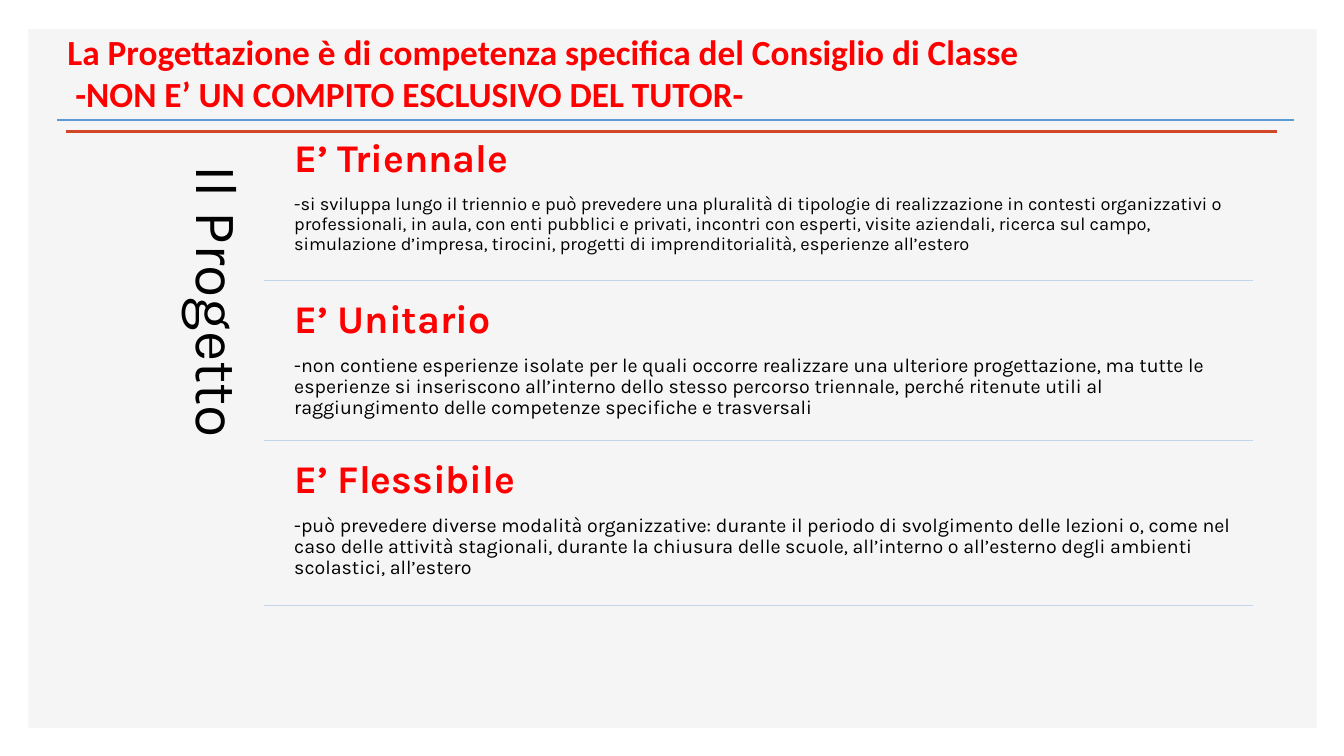
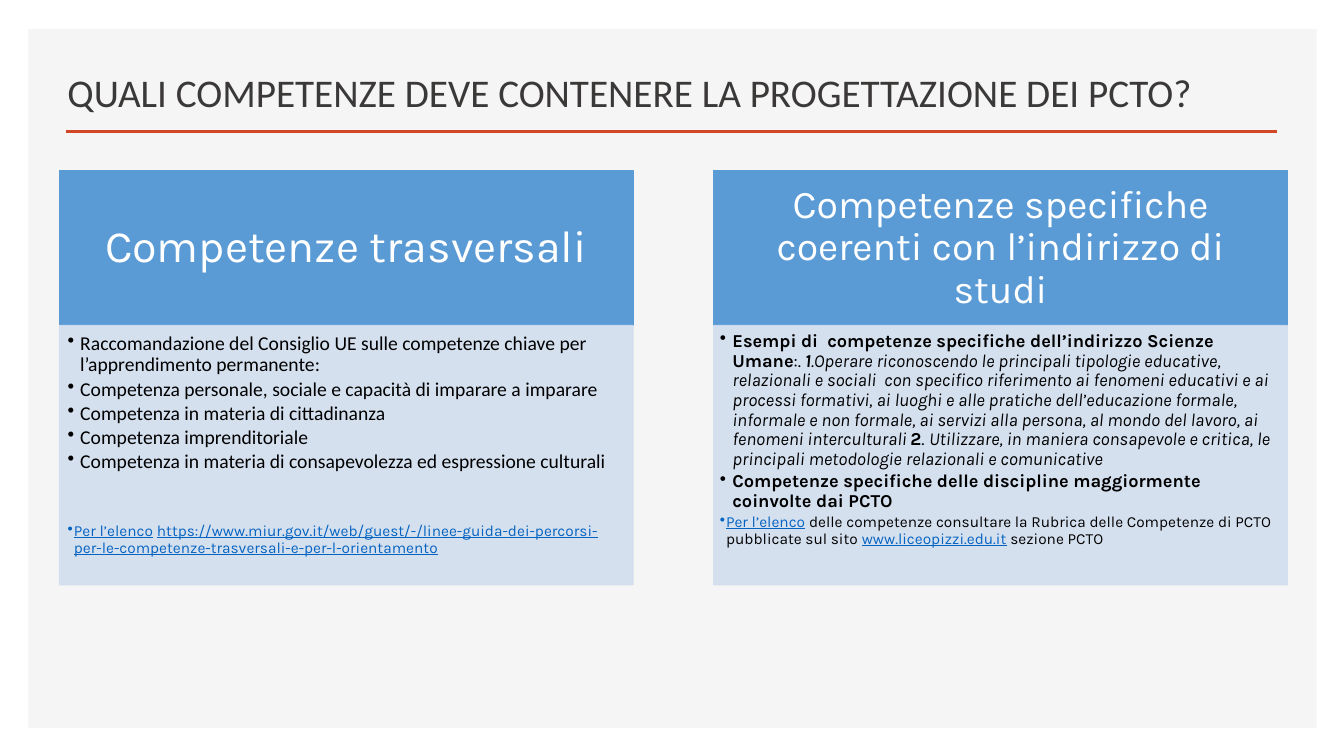
from lxml import etree
from pptx import Presentation
from pptx.dml.color import RGBColor
from pptx.enum.shapes import MSO_CONNECTOR, MSO_SHAPE
from pptx.enum.text import MSO_ANCHOR, MSO_AUTO_SIZE, PP_ALIGN
from pptx.oxml.ns import qn
from pptx.util import Pt

RECTANGLE, STRAIGHT = MSO_SHAPE.RECTANGLE, MSO_CONNECTOR.STRAIGHT
TOP, MIDDLE, BOTTOM = MSO_ANCHOR.TOP, MSO_ANCHOR.MIDDLE, MSO_ANCHOR.BOTTOM
LEFT, CENTER = PP_ALIGN.LEFT, PP_ALIGN.CENTER
NO_FIT = MSO_AUTO_SIZE.NONE

# Shared style
TITLE_FONT, TEXT_FONT = "Calibri", "Karla"
RED, BLACK, WHITE, DARK = "FF0000", "000000", "FFFFFF", "3B3838"
PANEL, ORANGE = "F5F5F5", "D24726"
BLUE, PALE_BLUE, DIVIDER, LINK = "5B9BD5", "D2DEEF", "C4D5EB", "0563C1"
TITLE_BOX = (41, 24.5, 872, 61.2)

# Content: slide 1, each section with its text size and lower edge
PROJECT_TITLE = ("La Progettazione è di competenza specifica del Consiglio di Classe\v"
                 " -NON E’ UN COMPITO ESCLUSIVO DEL TUTOR-")
PROJECT_LABEL = "Il Progetto"
SECTIONS = [
    ("E’ Triennale", 13, 200.2,
     "-si sviluppa lungo il triennio e può prevedere una pluralità di tipologie di "
     "realizzazione in contesti organizzativi o professionali, in aula, con enti pubblici "
     "e privati, incontri con esperti, visite aziendali, ricerca sul campo, simulazione "
     "d’impresa, tirocini, progetti di imprenditorialità, esperienze all’estero"),
    ("E’ Unitario", 14, 314.6,
     "-non contiene esperienze isolate per le quali occorre realizzare una ulteriore "
     "progettazione, ma tutte le esperienze si inseriscono all’interno dello stesso "
     "percorso triennale, perché ritenute utili al raggiungimento delle competenze "
     "specifiche e trasversali"),
    ("E’ Flessibile", 14, 432.7,
     "-può prevedere diverse modalità organizzative: durante il periodo di svolgimento "
     "delle lezioni o, come nel caso delle attività stagionali, durante la chiusura delle "
     "scuole, all’interno o all’esterno degli ambienti scolastici, all’estero"),
]

# Content: slide 2, runs are (text, style) with b bold, i italic, u link
SKILLS_TITLE = "QUALI COMPETENZE DEVE CONTENERE LA PROGETTAZIONE DEI PCTO?"
COLUMNS = [
    {"heading": "Competenze trasversali", "heading_size": 32,
     "insets": (5.8, 5.8, 7.9, 8.6), "font": TITLE_FONT, "size": 14, "link_gap": 34,
     "points": [
         [("Raccomandazione del Consiglio UE sulle competenze chiave per "
           "l’apprendimento permanente:", "")],
         [("Competenza personale, sociale e capacità di imparare a imparare", "")],
         [("Competenza in materia di cittadinanza", "")],
         [("Competenza imprenditoriale", "")],
         [("Competenza in materia di consapevolezza ed espressione culturali", "")]],
     "link": [
         ("Per l’elenco", "u"), (" ", ""),
         ("https://www.miur.gov.it/web/guest/-/linee-guida-dei-percorsi-per-le-competenze-"
          "trasversali-e-per-l-orientamento", "u")]},
    {"heading": "Competenze specifiche coerenti con l’indirizzo di studi", "heading_size": 28,
     "insets": (4.3, 4.3, 6.5, 7.2), "font": TEXT_FONT, "size": 13, "link_gap": 0,
     "points": [
         [("Esempi di  competenze specifiche dell’indirizzo Scienze Umane", "b"),
          (":.", ""), (" 1", "bi"),
          (".Operare riconoscendo le principali tipologie educative, relazionali e sociali  "
           "con specifico riferimento ai fenomeni educativi e ai processi formativi, ai "
           "luoghi e alle pratiche dell’educazione formale, informale e non formale, ai "
           "servizi alla persona, al mondo del lavoro, ai fenomeni interculturali ", "i"),
          ("2", "b"), (". ", ""),
          ("Utilizzare, in maniera consapevole e critica, le principali metodologie "
           "relazionali e comunicative", "i")],
         [("Competenze specifiche delle discipline maggiormente coinvolte dai PCTO", "b")]],
     "link": [
         ("Per l’elenco", "u"),
         (" delle competenze consultare la Rubrica delle Competenze di PCTO pubblicate "
          "sul sito ", ""),
         ("www.liceopizzi.edu.it", "u"), (" sezione PCTO", "")]},
]


def color(value):
    return RGBColor.from_string(value)


def points(*values):
    return [Pt(value) for value in values]


def set_font(font, name, size, fill, bold=False):
    font.name, font.size, font.bold = name, Pt(size), bold
    font.color.rgb = color(fill)


def set_frame(frame, insets, anchor=TOP):
    frame.word_wrap, frame.auto_size, frame.vertical_anchor = True, NO_FIT, anchor
    (frame.margin_left, frame.margin_top,
     frame.margin_right, frame.margin_bottom) = points(*insets)


def add_rule(page, left, right, top, fill, width=1):
    rule = page.shapes.add_connector(STRAIGHT, *points(left, top, right, top))
    rule.line.color.rgb, rule.line.width = color(fill), Pt(width)
    etree.SubElement(rule.element.spPr, qn("a:effectLst"))
    return rule


def add_block(page, area, fill, alpha=None):
    block = page.shapes.add_shape(RECTANGLE, *points(*area))
    block.shadow.inherit = False
    block.fill.solid()
    block.fill.fore_color.rgb = color(fill)
    block.line.color.rgb, block.line.width = color(fill), Pt(1)
    if alpha:
        for tone in block.element.spPr.iter(qn("a:srgbClr")):
            etree.SubElement(tone, qn("a:alpha")).set("val", str(alpha * 1000))
    return block


def add_para(frame, runs, name, size, fill, bold=False, align=LEFT,
             after=0.35, before=0, margin=0, bullet=False):
    """Append a paragraph; space after is a share of the text size."""
    first = frame.paragraphs[0]
    para = frame.add_paragraph() if first.runs else first
    para.alignment, para.line_spacing = align, 0.9
    para.space_before, para.space_after = points(before, after * size)
    if margin:
        settings = para._p.get_or_add_pPr()
        settings.set("marL", str(Pt(margin)))
        settings.set("indent", str(Pt(-margin if bullet else 0)))
        if bullet:
            etree.SubElement(settings, qn("a:buChar")).set("char", "•")
    set_font(para.font, name, size, fill, bold)
    for text, style in runs:
        span = para.add_run()
        span.text = text
        if "b" in style:
            span.font.bold = True
        if "i" in style:
            span.font.italic = True
        if "u" in style:
            span.font.underline = True
            span.font.color.rgb = color(LINK)


def add_page(deck, layout, title, size, fill, bold=False):
    page = deck.slides.add_slide(layout)
    box = page.shapes.title
    box.left, box.top, box.width, box.height = points(*TITLE_BOX)
    set_frame(box.text_frame, (7.2, 3.6, 7.2, 3.6), BOTTOM)
    box.text_frame.text = title
    para = box.text_frame.paragraphs[0]
    para.alignment = LEFT
    set_font(para.font, TITLE_FONT, size, fill, bold)
    return page


def dress_layout(layout, page):
    """Move the shared panel and title rule behind every slide."""
    for holder in list(layout.placeholders):
        if holder.placeholder_format.idx:
            holder.element.getparent().remove(holder.element)
    panel = add_block(page, (20.2, 20.9, 920.2, 499), PANEL)
    panel.line.fill.background()
    rule = add_rule(page, 47.5, 912.2, 94.1, ORANGE, 2)
    for position, part in enumerate((panel, rule), start=2):
        layout.shapes.element.insert(position, part.element)


def fill_project(page):
    add_rule(page, 41, 924.5, 85.7, BLUE)
    # Vertical label
    label = page.shapes.add_textbox(*points(41, 85.7, 147.6, 352))
    set_frame(label.text_frame, (12.2,) * 4)
    label.element.txBody.find(qn("a:bodyPr")).set("vert", "vert")
    add_para(label.text_frame, [(PROJECT_LABEL, "")], TEXT_FONT, 42, BLACK, margin=20)
    # Sections, each closed by a divider
    top = 85.7
    for heading, size, bottom, text in SECTIONS:
        box = page.shapes.add_textbox(*points(201.6, top + 5, 693.4, bottom - top - 5))
        set_frame(box.text_frame, (8.6,) * 4)
        add_para(box.text_frame, [(heading, "")], TEXT_FONT, 28, RED, bold=True)
        add_para(box.text_frame, [(text, "")], TEXT_FONT, size, BLACK)
        add_rule(page, 188.6, 895, bottom, DIVIDER)
        top = bottom


def fill_skills(page):
    top, width, head_height, body_height = 121.7, 409.7, 110.9, 185
    for index, column in enumerate(COLUMNS):
        left = 42.5 + index * 467.3
        # Heading block
        head = add_block(page, (left, top, width, head_height), BLUE)
        set_frame(head.text_frame, (16, 8.6, 16, 8.6), MIDDLE)
        add_para(head.text_frame, [(column["heading"], "")], TEXT_FONT,
                 column["heading_size"], WHITE, align=CENTER)
        # Bulleted body
        body = add_block(page, (left, top + head_height, width, body_height), PALE_BLUE, 90)
        set_frame(body.text_frame, column["insets"])
        for runs in column["points"]:
            add_para(body.text_frame, runs, column["font"], column["size"], BLACK,
                     after=0.15, margin=9, bullet=True)
        add_para(body.text_frame, column["link"], TEXT_FONT, 11, BLACK, after=0.15,
                 before=column["link_gap"], margin=4.5, bullet=True)


def main():
    deck = Presentation()
    deck.slide_width, deck.slide_height = points(960, 540)
    layout = deck.slide_layouts[5]
    project = add_page(deck, layout, PROJECT_TITLE, 25.2, RED, bold=True)
    dress_layout(layout, project)
    fill_project(project)
    fill_skills(add_page(deck, layout, SKILLS_TITLE, 28, DARK))
    deck.save("out.pptx")


if __name__ == "__main__":
    main()
